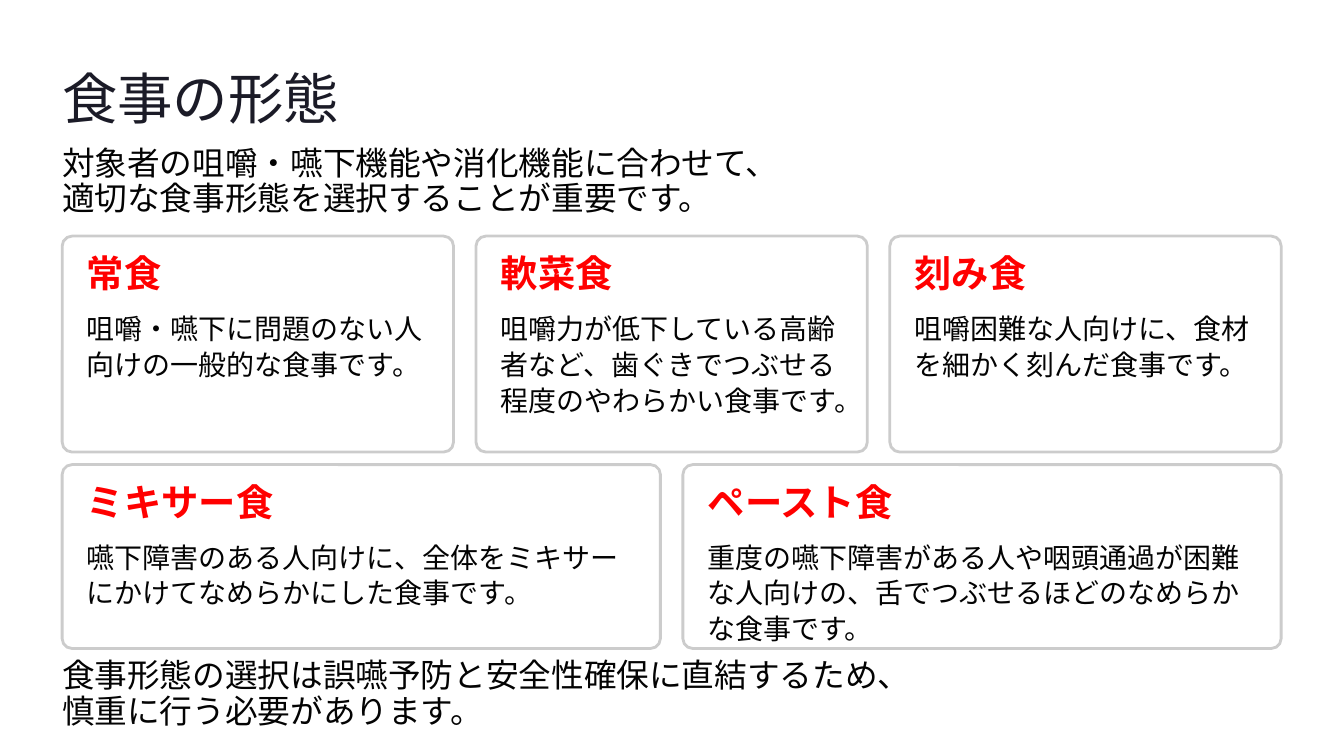
from dataclasses import dataclass

from lxml import etree
from pptx import Presentation
from pptx.dml.color import RGBColor
from pptx.enum.lang import MSO_LANGUAGE_ID
from pptx.enum.shapes import MSO_SHAPE
from pptx.oxml.ns import qn
from pptx.slide import Slide
from pptx.util import Cm, Pt

ROUNDED = MSO_SHAPE.ROUNDED_RECTANGLE
JAPANESE = MSO_LANGUAGE_ID.JAPANESE


@dataclass(frozen=True)
class TextStyle:
    font: str
    size: float
    color: str
    line_spacing: float
    bold: bool = False


@dataclass(frozen=True)
class Theme:
    title: TextStyle = TextStyle("Inter", 47.5, "1B1B27", 59.5)
    statement: TextStyle = TextStyle("Roboto", 28, "030303", 30.5)
    heading: TextStyle = TextStyle("Inter", 32, "FF0000", 29.5, True)
    body: TextStyle = TextStyle("Roboto", 24, "030303", 30.5)
    card_fill: str = "FFFFFF"
    card_opacity: int = 95
    card_border: str = "CCCCCC"
    border_width: float = 2.4


@dataclass(frozen=True)
class Box:
    left: float
    top: float
    width: float
    height: float


@dataclass(frozen=True)
class Meal:
    name: str
    description: str


@dataclass(frozen=True)
class MealRow:
    top: float
    height: float
    meals: tuple[Meal, ...]


THEME = Theme()

# Layout in centimetres
MARGIN = 1.88
CONTENT_WIDTH = 36.86
CARD_GAP = 0.68
CARD_PADDING = 0.75
CORNER_RADIUS = 0.3
BODY_OFFSET = 2.23

MEAL_ROWS = (
    MealRow(7.14, 6.53, (
        Meal("常食", "咀嚼・嚥下に問題のない人向けの一般的な食事です。"),
        Meal("軟菜食", "咀嚼力が低下している高齢者など、歯ぐきでつぶせる程度のやわらかい食事です。"),
        Meal("刻み食", "咀嚼困難な人向けに、食材を細かく刻んだ食事です。"),
    )),
    MealRow(14.05, 5.56, (
        Meal("ミキサー食", "嚥下障害のある人向けに、全体をミキサーにかけてなめらかにした食事です。"),
        Meal("ペースト食", "重度の嚥下障害がある人や咽頭通過が困難な人向けの、舌でつぶせるほどのなめらかな食事です。"),
    )),
)


def add_text(slide: Slide, box: Box, lines: tuple[str, ...], style: TextStyle,
             wrap: bool = False) -> None:
    shape = slide.shapes.add_textbox(Cm(box.left), Cm(box.top), Cm(box.width), Cm(box.height))
    frame = shape.text_frame
    frame.word_wrap = wrap
    frame.margin_left = frame.margin_right = frame.margin_top = frame.margin_bottom = 0
    for index, line in enumerate(lines):
        paragraph = frame.add_paragraph() if index else frame.paragraphs[0]
        paragraph.line_spacing = Pt(style.line_spacing)
        run = paragraph.add_run()
        run.text = line
        font = run.font
        font.name = style.font
        font.size = Pt(style.size)
        font.bold = style.bold
        font.language_id = JAPANESE
        font.color.rgb = RGBColor.from_string(style.color)
        # East Asian characters use the same typeface
        latin = run._r.rPr.find(qn("a:latin"))
        east_asian = etree.Element(qn("a:ea"), typeface=style.font)
        latin.addnext(east_asian)


def add_card(slide: Slide, box: Box, meal: Meal) -> None:
    # Frame
    shape = slide.shapes.add_shape(ROUNDED, Cm(box.left), Cm(box.top), Cm(box.width), Cm(box.height))
    shape.adjustments[0] = CORNER_RADIUS / box.height
    shape.shadow.inherit = False
    shape.fill.solid()
    shape.fill.fore_color.rgb = RGBColor.from_string(THEME.card_fill)
    fill_color = shape._element.spPr.find(qn("a:solidFill"))[0]
    etree.SubElement(fill_color, qn("a:alpha"), val=str(THEME.card_opacity * 1000))
    shape.line.color.rgb = RGBColor.from_string(THEME.card_border)
    shape.line.width = Pt(THEME.border_width)

    # Heading and description
    left = box.left + CARD_PADDING
    add_text(slide, Box(left, box.top + CARD_PADDING, 8.43, 1.04), (meal.name,), THEME.heading)
    body = Box(left, box.top + BODY_OFFSET, box.width - 2 * CARD_PADDING, 2.16)
    add_text(slide, body, (meal.description,), THEME.body, wrap=True)


def add_meal_row(slide: Slide, row: MealRow) -> None:
    count = len(row.meals)
    width = (CONTENT_WIDTH - (count - 1) * CARD_GAP) / count
    for index, meal in enumerate(row.meals):
        left = MARGIN + index * (width + CARD_GAP)
        add_card(slide, Box(left, row.top, width, row.height), meal)


def main() -> None:
    presentation = Presentation()
    presentation.slide_width = Cm(40.64)
    presentation.slide_height = Cm(22.86)
    slide = presentation.slides.add_slide(presentation.slide_layouts[6])

    # Title and introduction
    add_text(slide, Box(MARGIN, 1.85, 16.87, 2.11), ("食事の形態",), THEME.title)
    add_text(slide, Box(MARGIN, 4.42, CONTENT_WIDTH, 1.12),
             ("対象者の咀嚼・嚥下機能や消化機能に合わせて、", "適切な食事形態を選択することが重要です。"),
             THEME.statement)

    # Meal cards
    for row in MEAL_ROWS:
        add_meal_row(slide, row)

    # Conclusion
    add_text(slide, Box(MARGIN, 19.91, CONTENT_WIDTH, 1.07),
             ("食事形態の選択は誤嚥予防と安全性確保に直結するため、", "慎重に行う必要があります。"),
             THEME.statement)

    presentation.save("out.pptx")


if __name__ == "__main__":
    main()
